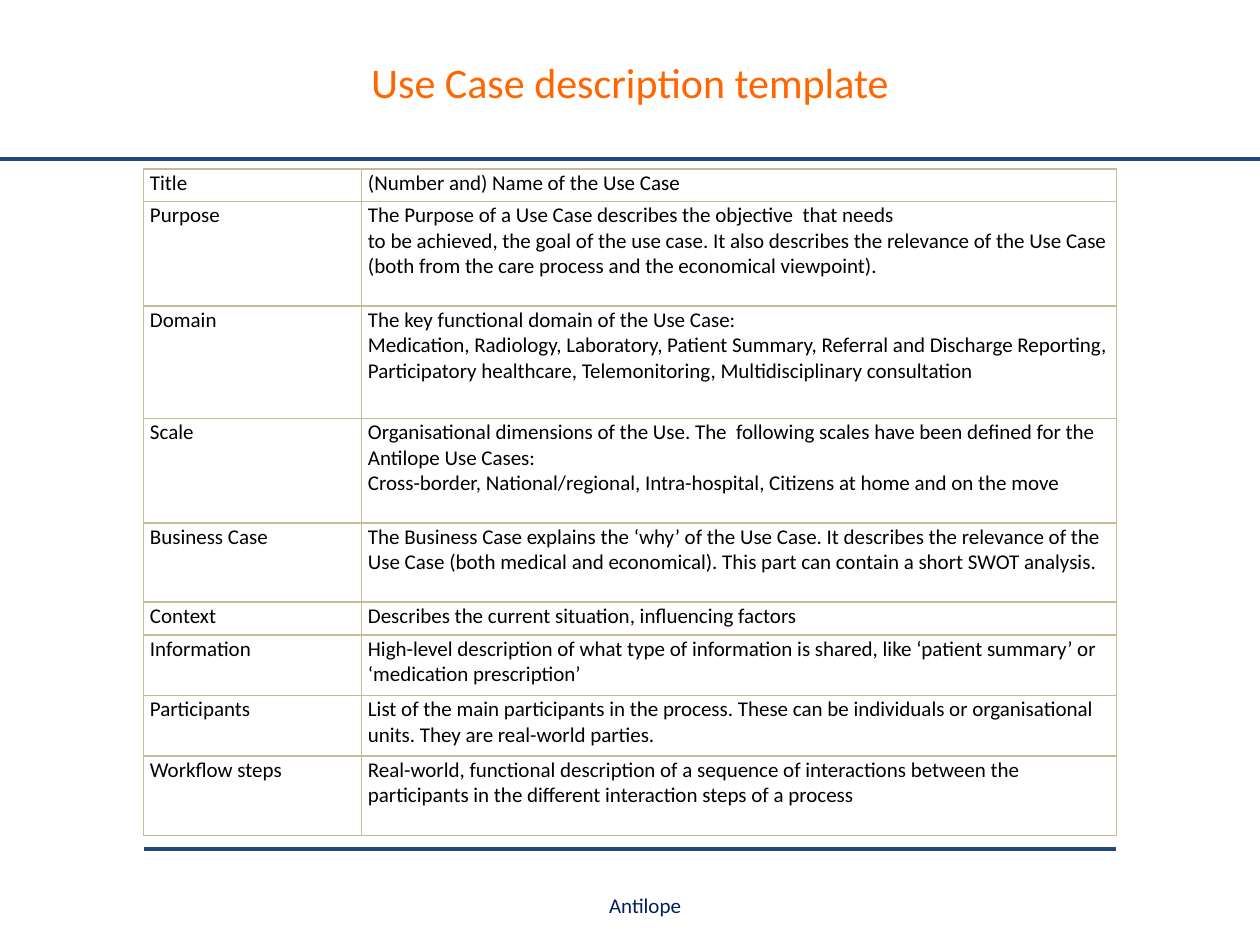
from lxml.etree import SubElement as Sub
from pptx import Presentation
from pptx.dml.color import RGBColor
from pptx.enum.shapes import MSO_CONNECTOR as Link
from pptx.enum.text import MSO_ANCHOR as Anchor, PP_ALIGN as Align
from pptx.oxml.ns import qn
from pptx.util import Inches, Pt

NAVY, ORANGE, BLUE, TAN = "1F497D", "FF6600", "002060", "C4BC96"
COLS = [1.73, 5.99]
ROWS = [
    (0.26, "Title", ["(Number and) Name of the Use Case"]),
    (0.83, "Purpose", [
        "The Purpose of a Use Case describes the objective  that needs",
        "to be achieved, the goal of the use case. It also describes the relevance "
        "of the Use Case (both from the care process and the economical viewpoint)."]),
    (0.89, "Domain", [
        "The key functional domain of the Use Case:",
        "Medication, Radiology, Laboratory, Patient Summary, Referral and Discharge "
        "Reporting, Participatory healthcare, Telemonitoring, Multidisciplinary consultation"]),
    (0.83, "Scale", [
        "Organisational dimensions of the Use. The  following scales have been "
        "defined for the Antilope Use Cases:",
        "Cross-border, National/regional, Intra-hospital, Citizens at home and on the move"]),
    (0.63, "Business Case", [
        "The Business Case explains the ‘why’ of the Use Case. It describes the "
        "relevance of the Use Case (both medical and economical). "
        "This part can contain a short SWOT analysis."]),
    (0.26, "Context", ["Describes the current situation, influencing factors"]),
    (0.48, "Information", [
        "High-level description of what type of information is shared, "
        "like ‘patient summary’ or ‘medication prescription’"]),
    (0.48, "Participants", [
        "List of the main participants in the process. These can be individuals "
        "or organisational units. They are real-world parties."]),
    (0.63, "Workflow steps", [
        "Real-world, functional description of a sequence of interactions between the "
        "participants in the different interaction steps of a process"]),
]


def color(code):
    return RGBColor.from_string(code)


def write(frame, *lines, size=12, ink="000000", align=Align.LEFT):
    frame.word_wrap = True
    for i, line in enumerate(lines):
        para = frame.add_paragraph() if i else frame.paragraphs[0]
        para.alignment = align
        run = para.add_run()
        run.text = line
        run.font.name, run.font.size = "Calibri", Pt(size)
        run.font.color.rgb = color(ink)


class Deck:
    """Holds the style and the current slide, with a method for each element."""

    def __init__(self):
        self.show = Presentation()
        self.show.slide_width, self.show.slide_height = Inches(10), Inches(7.5)
        self.slide = self.show.slides.add_slide(self.show.slide_layouts[6])
        self.shapes = self.slide.shapes

    def rule(self, left, right, y):
        line = self.shapes.add_connector(
            Link.STRAIGHT, Inches(left), Inches(y), Inches(right), Inches(y))
        line.line.color.rgb, line.line.width = color(NAVY), Pt(2.25)
        Sub(line._element.spPr, qn("a:effectLst"))

    def text(self, box, line, **style):
        frame = self.shapes.add_textbox(*map(Inches, box)).text_frame
        frame.vertical_anchor = Anchor.MIDDLE
        write(frame, line, align=Align.CENTER, **style)

    def border(self, cell):
        props = cell._tc.get_or_add_tcPr()
        for side in ("lnL", "lnR", "lnT", "lnB"):
            edge = Sub(props, qn(f"a:{side}"), w=str(Pt(1)))
            Sub(Sub(edge, qn("a:solidFill")), qn("a:srgbClr"), val=TAN)

    def cell(self, cell, lines):
        cell.margin_left = cell.margin_right = Inches(0.05)
        cell.margin_top = cell.margin_bottom = Inches(0.01)
        self.border(cell)
        cell.fill.background()
        write(cell.text_frame, *lines)

    def table(self, left, top, cols, rows):
        high = sum(row[0] for row in rows)
        grid = self.shapes.add_table(
            len(rows), len(cols), Inches(left), Inches(top),
            Inches(sum(cols)), Inches(high)).table
        grid.first_row = grid.horz_banding = False
        for col, width in zip(grid.columns, cols):
            col.width = Inches(width)
        for row, (height, name, lines) in zip(grid.rows, rows):
            row.height = Inches(height)
            self.cell(row.cells[0], [name])
            self.cell(row.cells[1], lines)


def main():
    deck = Deck()
    deck.rule(1.14, 8.86, 6.74)
    deck.rule(0, 10, 1.26)
    deck.text((2.64, 6.98, 4.96, 0.4), "Antilope", ink=BLUE)
    deck.text((2.36, 0.25, 5.28, 0.79), "Use Case description template",
              size=24, ink=ORANGE)
    deck.table(1.14, 1.34, COLS, ROWS)
    deck.show.save("out.pptx")


if __name__ == "__main__":
    main()
